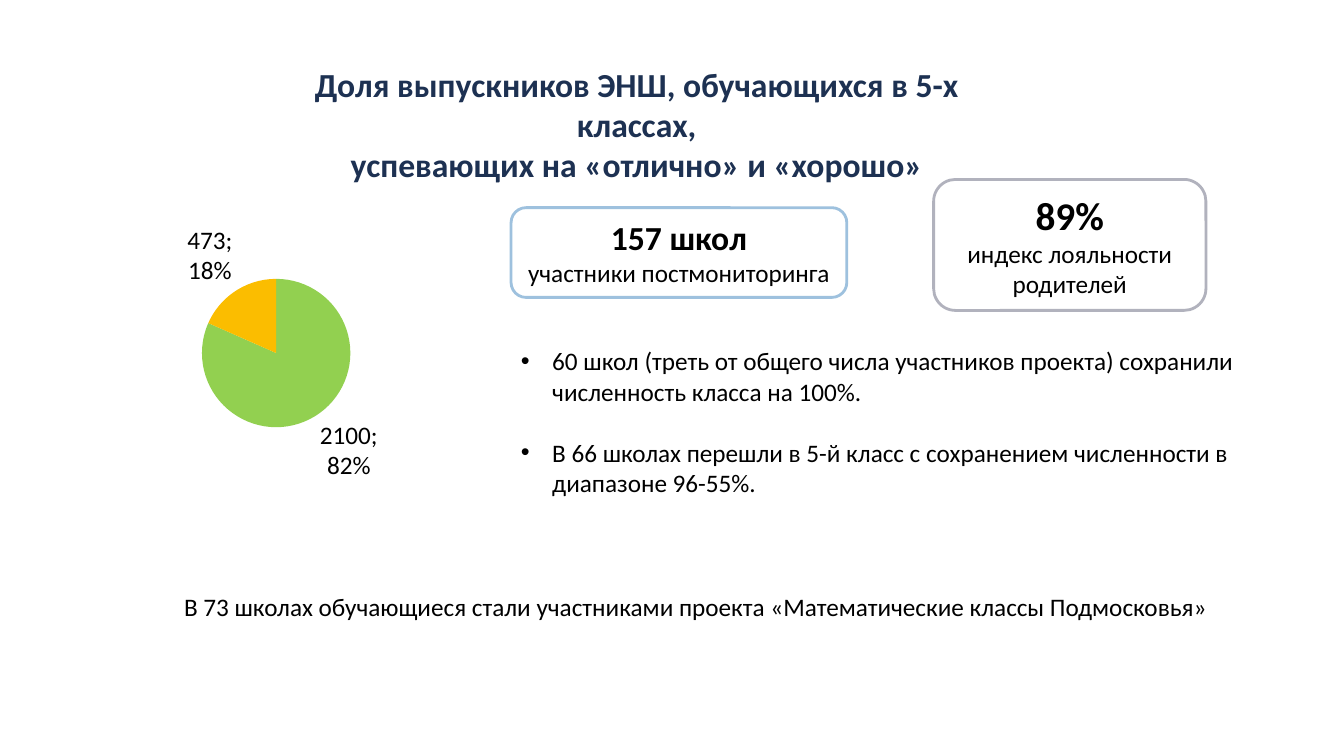
import pptx
import pptx.util
import pptx.chart.data
import pptx.dml.color
import pptx.enum.chart
import pptx.enum.shapes
import pptx.enum.text
from lxml import etree

RGBColor = pptx.dml.color.RGBColor
Pt = pptx.util.Pt
Inches = pptx.util.Inches
CENTER = pptx.enum.text.PP_ALIGN.CENTER

NAVY = RGBColor(0x1D, 0x31, 0x52)
BLACK = RGBColor(0, 0, 0)
BLUE = RGBColor(0x9E, 0xC1, 0xDE)
GRAY = RGBColor(0xB1, 0xB2, 0xBD)
GREEN = RGBColor(0x92, 0xD0, 0x50)
AMBER = RGBColor(0xFB, 0xBD, 0x00)

FONT = "Calibri"
BODY = 18
WIDTH, HEIGHT = Inches(13.33), Inches(7.5)


def area(left, top, width, height):
    """Turn percentages of the slide's size into lengths."""
    return [int(share * full / 100) for share, full in
            ((left, WIDTH), (top, HEIGHT), (width, WIDTH), (height, HEIGHT))]


def set_font(font, size=BODY, color=BLACK, bold=False):
    font.name = FONT
    font.size = Pt(size)
    font.bold = bold
    font.color.rgb = color


def write(tf, lines, align=CENTER):
    """Fill a frame with (text, size, colour, bold) lines."""
    tf.word_wrap = True
    tf.auto_size = pptx.enum.text.MSO_AUTO_SIZE.SHAPE_TO_FIT_TEXT
    for i, (text, *style) in enumerate(lines):
        p = tf.paragraphs[0] if i == 0 else tf.add_paragraph()
        p.text = text
        p.alignment = align
        set_font(p.runs[0].font, *style)


def add_text(s, place, lines, align=CENTER):
    tf = s.shapes.add_textbox(*area(*place)).text_frame
    write(tf, lines, align)
    return tf


def add_bullets(s, place, texts):
    tf = add_text(s, place, [(text,) for text in texts],
                  pptx.enum.text.PP_ALIGN.LEFT)
    for i, p in enumerate(tf.paragraphs):
        if i:
            p.space_before = Pt(22)
        pPr = p._p.get_or_add_pPr()
        pPr.set("marL", str(Inches(0.31)))
        pPr.set("indent", str(-Inches(0.31)))
        ns = pptx.oxml.ns.qn
        etree.SubElement(pPr, ns("a:buFont")).set("typeface", "Arial")
        etree.SubElement(pPr, ns("a:buChar")).set("char", "•")


def add_card(s, place, color, figure, size, captions):
    sp = s.shapes.add_shape(pptx.enum.shapes.MSO_SHAPE.ROUNDED_RECTANGLE,
                            *area(*place))
    sp.shadow.inherit = False
    sp.fill.background()
    sp.line.color.rgb = color
    sp.line.width = Pt(2)
    tf = sp.text_frame
    tf.margin_left = tf.margin_right = Inches(0.05)
    tf.margin_top = tf.margin_bottom = Inches(0.05)
    tf.vertical_anchor = pptx.enum.text.MSO_ANCHOR.MIDDLE
    write(tf, [(figure, size, BLACK, True)] + [(c,) for c in captions])


def set_plot_area(chart, x, y, w, h):
    """Place the pie by shares of the chart's size."""
    ns = pptx.oxml.ns.qn
    plot_area = chart._chartSpace.chart.plotArea
    for old in plot_area.findall(ns("c:layout")):
        plot_area.remove(old)
    layout = etree.Element(ns("c:layout"))
    manual = etree.SubElement(layout, ns("c:manualLayout"))
    for tag, val in (("layoutTarget", "inner"), ("xMode", "edge"),
                     ("yMode", "edge"), ("x", x), ("y", y),
                     ("w", w), ("h", h)):
        etree.SubElement(manual, ns("c:" + tag)).set("val", str(val))
    plot_area.insert(0, layout)


def add_pie(s, place, values, colors):
    data = pptx.chart.data.CategoryChartData()
    data.categories = [str(i + 1) for i in range(len(values))]
    data.add_series("Series 1", values)
    chart = s.shapes.add_chart(pptx.enum.chart.XL_CHART_TYPE.PIE,
                               *area(*place), data).chart
    chart.has_title = False
    chart.has_legend = False
    set_font(chart.font)
    set_plot_area(chart, 0.3, 0.22, 0.4, 0.47)
    plot = chart.plots[0]
    plot.vary_by_categories = True
    for i, color in enumerate(colors):
        fill = plot.series[0].points[i].format.fill
        fill.solid()
        fill.fore_color.rgb = color
    labels = plot.series[0].data_labels
    labels.show_value = True
    labels.show_percentage = True
    labels.position = pptx.enum.chart.XL_LABEL_POSITION.BEST_FIT
    set_font(labels.font)
    ns = pptx.oxml.ns.qn
    separator = etree.Element(ns("c:separator"))
    separator.text = "; "
    labels._element.find(ns("c:showBubbleSize")).addnext(separator)


def main():
    prs = pptx.Presentation()
    prs.slide_width, prs.slide_height = WIDTH, HEIGHT
    s = prs.slides.add_slide(prs.slide_layouts[6])

    add_card(s, (38.03, 27.47, 24.98, 11.87), BLUE, "157 школ", 24,
             ["участники постмониторинга"])
    add_text(s, (18.83, 7.73, 57.09, 12.13), [
        ("Доля выпускников ЭНШ, обучающихся в 5-х классах,", 24, NAVY, True),
        ("успевающих на «отлично» и «хорошо»", 24, NAVY, True)])
    add_card(s, (69.47, 23.73, 20.26, 17.33), GRAY, "89%", 28,
             ["индекс лояльности", "родителей"])
    add_pie(s, (6.75, 27.6, 27.61, 42), (2100, 473), (GREEN, AMBER))
    add_bullets(s, (38.03, 45.07, 55.29, 21.6), [
        "60 школ (треть от общего числа участников проекта) сохранили "
        "численность класса на 100%.",
        "В 66 школах перешли в 5-й класс с сохранением численности в "
        "диапазоне 96-55%."])
    add_text(s, (6.75, 77.6, 90.02, 5.33), [
        ("В 73 школах обучающиеся стали участниками проекта "
         "«Математические классы Подмосковья»",)])

    prs.save("out.pptx")


if __name__ == "__main__":
    main()
